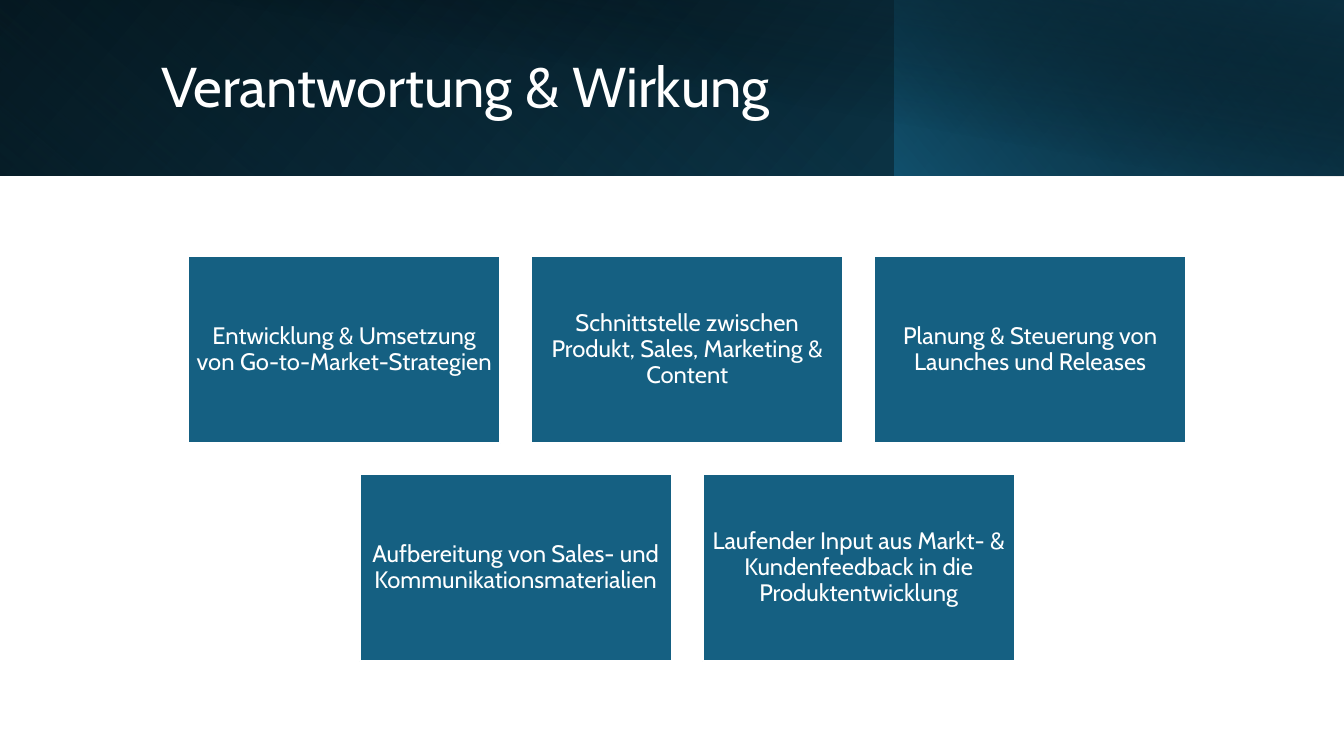
from dataclasses import dataclass

from lxml.etree import SubElement
from pptx import Presentation
from pptx.dml.color import RGBColor
from pptx.enum.shapes import MSO_SHAPE as Shape
from pptx.enum.text import MSO_ANCHOR as Anchor, PP_ALIGN as Align
from pptx.oxml.ns import qn
from pptx.shapes.autoshape import Shape as AutoShape
from pptx.slide import Slide
from pptx.util import Pt

FONT = "Cabin"
WHITE = "FFFFFF"
CARD_BLUE = "156082"

ROW_CENTER = 490.9
CARDS_TOP = 182.9
CARD_WIDTH = 222.75
CARD_HEIGHT = CARD_WIDTH * 0.6
CARD_GAP = CARD_WIDTH * 0.1

CARD_ROWS = [
    [
        "Entwicklung & Umsetzung von Go-to-Market-Strategien",
        "Schnittstelle zwischen Produkt, Sales, Marketing & Content",
        "Planung & Steuerung von Launches und Releases",
    ],
    [
        "Aufbereitung von Sales- und Kommunikationsmaterialien",
        "Laufender Input aus Markt- & Kundenfeedback in die Produktentwicklung",
    ],
]


@dataclass
class Stop:
    position: int
    color: str
    opacity: int = 100


@dataclass
class Band:
    left: float
    width: float
    height: float
    angle: int
    stops: tuple[Stop, Stop]
    rotation: int = 0
    flipped: bool = True


HEADER_BANDS = [
    Band(0, 960, 125.5, 140, (Stop(0, "000000"), Stop(100, "104862"))),
    Band(0, 639.2, 125.5, 230,
         (Stop(20, CARD_BLUE, 0), Stop(100, "0B3041", 55)), rotation=180),
    Band(638.8, 321.2, 125.5, 220,
         (Stop(0, CARD_BLUE, 66), Stop(100, "000000", 30))),
    Band(36, 924, 126, 280,
         (Stop(50, "000000", 0), Stop(99, "0B3041", 52)), flipped=False),
]


def rgb(color: str) -> RGBColor:
    return RGBColor.from_string(color)


def set_gradient(sp: AutoShape, band: Band) -> None:
    """Fill with a linear gradient whose stops may be transparent."""
    sp.fill.gradient()
    grad = sp._element.spPr.find(qn("a:gradFill"))
    for child in list(grad):
        grad.remove(child)
    stop_list = SubElement(grad, qn("a:gsLst"))
    for stop in band.stops:
        gs = SubElement(stop_list, qn("a:gs"), pos=str(stop.position * 1000))
        color = SubElement(gs, qn("a:srgbClr"), val=stop.color)
        if stop.opacity < 100:
            SubElement(color, qn("a:alpha"), val=str(stop.opacity * 1000))
    SubElement(grad, qn("a:lin"), ang=str(band.angle * 60000), scaled="0")


def add_rectangle(slide: Slide, left: float, top: float,
                  width: float, height: float) -> AutoShape:
    sp = slide.shapes.add_shape(
        Shape.RECTANGLE, Pt(left), Pt(top), Pt(width), Pt(height))
    sp.shadow.inherit = False
    return sp


def add_band(slide: Slide, band: Band) -> None:
    sp = add_rectangle(slide, band.left, 0, band.width, band.height)
    sp.line.fill.background()
    sp.rotation = band.rotation
    if band.flipped:
        sp._element.spPr.xfrm.set("flipH", "1")
    set_gradient(sp, band)


def write(sp: AutoShape, text: str, size: float, align: Align) -> None:
    tf = sp.text_frame
    tf.text = text
    tf.word_wrap = True
    tf.vertical_anchor = Anchor.MIDDLE
    p = tf.paragraphs[0]
    p.alignment = align
    p.line_spacing = 0.9
    font = p.runs[0].font
    font.name = FONT
    font.size = Pt(size)
    font.color.rgb = rgb(WHITE)


def add_card(slide: Slide, left: float, top: float, text: str) -> None:
    sp = add_rectangle(slide, left, top, CARD_WIDTH, CARD_HEIGHT)
    sp.fill.solid()
    sp.fill.fore_color.rgb = rgb(CARD_BLUE)
    sp.line.color.rgb = rgb(WHITE)
    sp.line.width = Pt(1.5)
    tf = sp.text_frame
    tf.margin_left = tf.margin_right = Pt(5.1)
    tf.margin_top = tf.margin_bottom = Pt(5.1)
    write(sp, text, 17, Align.CENTER)


def add_card_row(slide: Slide, top: float, texts: list[str]) -> None:
    """Place the cards side by side, centred as a group."""
    pitch = CARD_WIDTH + CARD_GAP
    left = ROW_CENTER - (len(texts) * pitch - CARD_GAP) / 2
    for column, text in enumerate(texts):
        add_card(slide, left + column * pitch, top, text)


def main() -> None:
    prs = Presentation()
    prs.slide_width, prs.slide_height = Pt(960), Pt(540)
    slide = prs.slides.add_slide(prs.slide_layouts[6])

    for band in HEADER_BANDS:
        add_band(slide, band)
    title = slide.shapes.add_textbox(Pt(108), Pt(23), Pt(779), Pt(81.4))
    write(title, "Verantwortung & Wirkung", 40, Align.LEFT)

    for row, texts in enumerate(CARD_ROWS):
        add_card_row(slide, CARDS_TOP + row * (CARD_HEIGHT + CARD_GAP), texts)

    prs.save("out.pptx")


if __name__ == "__main__":
    main()
